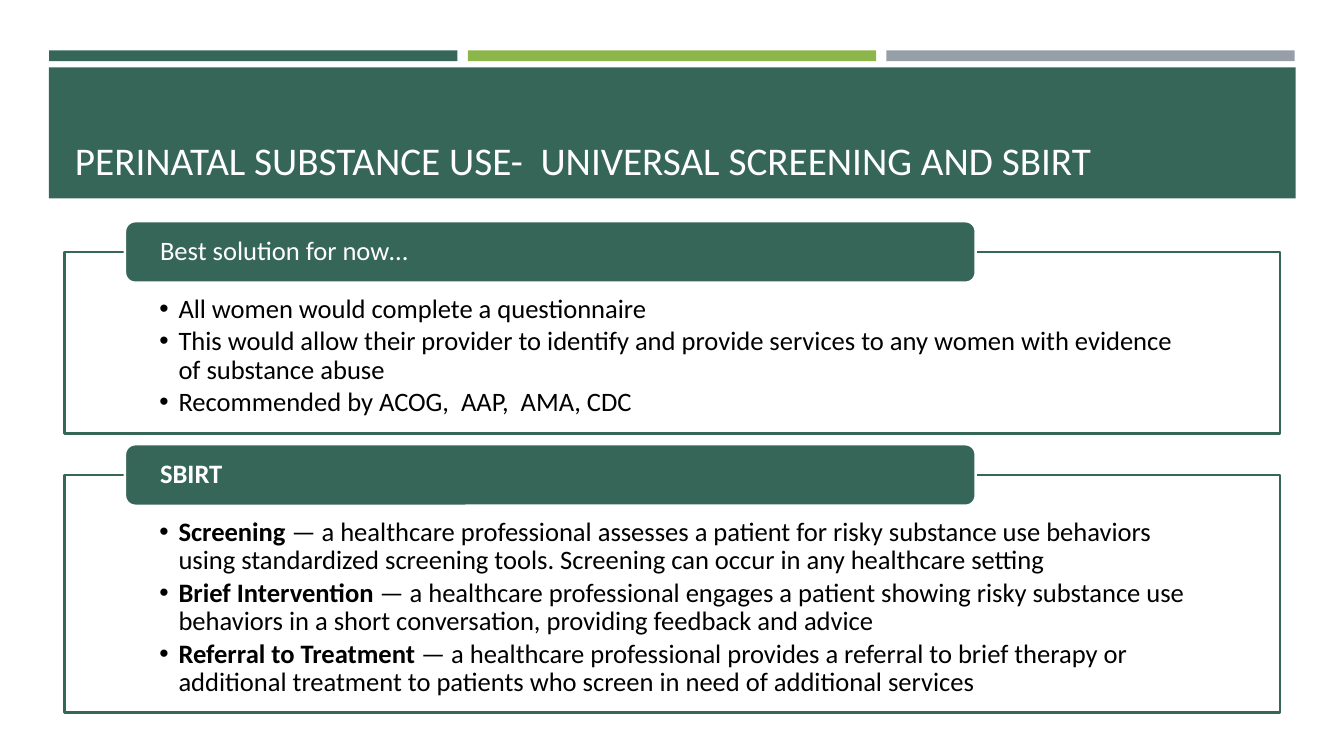
from dataclasses import dataclass

from lxml import etree
from pptx import Presentation
from pptx.dml.color import RGBColor
from pptx.enum.shapes import MSO_SHAPE
from pptx.enum.text import MSO_ANCHOR, PP_ALIGN
from pptx.oxml.ns import qn
from pptx.util import Cm, Pt

RECTANGLE = MSO_SHAPE.RECTANGLE
ROUNDED = MSO_SHAPE.ROUNDED_RECTANGLE
TOP, MIDDLE, BOTTOM = MSO_ANCHOR.TOP, MSO_ANCHOR.MIDDLE, MSO_ANCHOR.BOTTOM
LEFT = PP_ALIGN.LEFT


@dataclass(frozen=True)
class Theme:
    font: str = "Calibri"
    green: RGBColor = RGBColor(0x36, 0x66, 0x58)
    lime: RGBColor = RGBColor(0x8C, 0xB6, 0x4A)
    gray: RGBColor = RGBColor(0x96, 0x9F, 0xA7)
    white: RGBColor = RGBColor(0xFF, 0xFF, 0xFF)
    title_text: RGBColor = RGBColor(0xFF, 0xFE, 0xFF)
    black: RGBColor = RGBColor(0, 0, 0)
    title_size: Pt = Pt(28)
    body_size: Pt = Pt(19)
    outline: Pt = Pt(1.75)


@dataclass(frozen=True)
class Box:
    """Left, top, width and height in centimetres."""
    left: float
    top: float
    width: float
    height: float


@dataclass(frozen=True)
class Bullet:
    text: str
    term: str = ""


@dataclass(frozen=True)
class Section:
    heading: str
    heading_bold: bool
    top: float
    height: float
    bullets: tuple[Bullet, ...]


THEME = Theme()
TITLE = "PERINATAL SUBSTANCE USE-  UNIVERSAL SCREENING AND SBIRT"
SECTIONS = (
    Section("Best solution for now…", False, 6.35, 4.57, (
        Bullet("All women would complete a questionnaire"),
        Bullet("This would allow their provider to identify and provide services "
               "to any women with evidence of substance abuse"),
        Bullet("Recommended by ACOG,  AAP,  AMA, CDC"),
    )),
    Section("SBIRT", True, 11.97, 5.99, (
        Bullet(" — a healthcare professional assesses a patient for risky substance use "
               "behaviors using standardized screening tools. Screening can occur in any "
               "healthcare setting", "Screening"),
        Bullet(" — a healthcare professional engages a patient showing risky substance use "
               "behaviors in a short conversation, providing feedback and advice",
               "Brief Intervention"),
        Bullet(" — a healthcare professional provides a referral to brief therapy or "
               "additional treatment to patients who screen in need of additional services",
               "Referral to Treatment"),
    )),
)
ACCENT_LEFT, ACCENT_WIDTH, ACCENT_PITCH = 1.24, 10.29, 10.55
HEADING_HEIGHT = 1.55
BULLET_INDENT = Cm(0.48)


def add_box(slide, kind, box: Box, fill: RGBColor, line: RGBColor | None = None):
    shape = slide.shapes.add_shape(
        kind, Cm(box.left), Cm(box.top), Cm(box.width), Cm(box.height))
    shape.shadow.inherit = False
    shape.fill.solid()
    shape.fill.fore_color.rgb = fill
    if line is None:
        shape.line.fill.background()
    else:
        shape.line.color.rgb = line
        shape.line.width = THEME.outline
    return shape


def set_frame(shape, anchor, left: float, top: float, right: float, bottom: float):
    """Set the anchor and insets (in centimetres) and return the text frame."""
    frame = shape.text_frame
    frame.word_wrap = True
    frame.vertical_anchor = anchor
    frame.margin_left, frame.margin_top = Cm(left), Cm(top)
    frame.margin_right, frame.margin_bottom = Cm(right), Cm(bottom)
    return frame


def format_paragraph(paragraph, size: Pt, color: RGBColor) -> None:
    paragraph.alignment = LEFT
    paragraph.line_spacing = 0.9
    for run in paragraph.runs:
        run.font.name = THEME.font
        run.font.size = size
        run.font.color.rgb = color


def add_bullet_mark(paragraph) -> None:
    properties = paragraph._p.get_or_add_pPr()
    properties.set("marL", str(BULLET_INDENT))
    properties.set("indent", str(-BULLET_INDENT))
    etree.SubElement(properties, qn("a:buFont"), typeface="Arial")
    etree.SubElement(properties, qn("a:buChar"), char="•")


def add_title(slide) -> None:
    band = add_box(slide, RECTANGLE, Box(1.23, 1.7, 31.42, 3.3), THEME.green)
    frame = set_frame(band, BOTTOM, 0.66, 0.36, 0.66, 0.36)
    frame.text = TITLE
    format_paragraph(frame.paragraphs[0], THEME.title_size, THEME.title_text)


def add_section(slide, section: Section) -> None:
    panel = add_box(slide, RECTANGLE, Box(1.63, section.top, 30.63, section.height),
                    THEME.white, THEME.green)
    frame = set_frame(panel, TOP, 2.39, 1.09, 2.39, 0.38)
    for index, bullet in enumerate(section.bullets):
        paragraph = frame.add_paragraph() if index else frame.paragraphs[0]
        paragraph.text = bullet.term or bullet.text
        if bullet.term:
            paragraph.runs[0].font.bold = True
            paragraph.add_run().text = bullet.text
        format_paragraph(paragraph, THEME.body_size, THEME.black)
        paragraph.space_after = Pt(2.5)
        add_bullet_mark(paragraph)

    heading_box = Box(3.15, section.top - HEADING_HEIGHT / 2, 21.44, HEADING_HEIGHT)
    heading = add_box(slide, ROUNDED, heading_box, THEME.green, THEME.white)
    # The rounded corners already inset the text a little.
    frame = set_frame(heading, MIDDLE, 0.81, 0, 0.81, 0)
    frame.text = section.heading
    format_paragraph(frame.paragraphs[0], THEME.body_size, THEME.white)
    frame.paragraphs[0].runs[0].font.bold = section.heading_bold


def main() -> None:
    presentation = Presentation()
    presentation.slide_width, presentation.slide_height = Cm(33.87), Cm(19.05)
    slide = presentation.slides.add_slide(presentation.slide_layouts[6])
    for index, color in enumerate((THEME.green, THEME.lime, THEME.gray)):
        left = ACCENT_LEFT + index * ACCENT_PITCH
        add_box(slide, RECTANGLE, Box(left, 1.27, ACCENT_WIDTH, 0.27), color)
    add_title(slide)
    for section in SECTIONS:
        add_section(slide, section)
    presentation.save("out.pptx")


if __name__ == "__main__":
    main()
